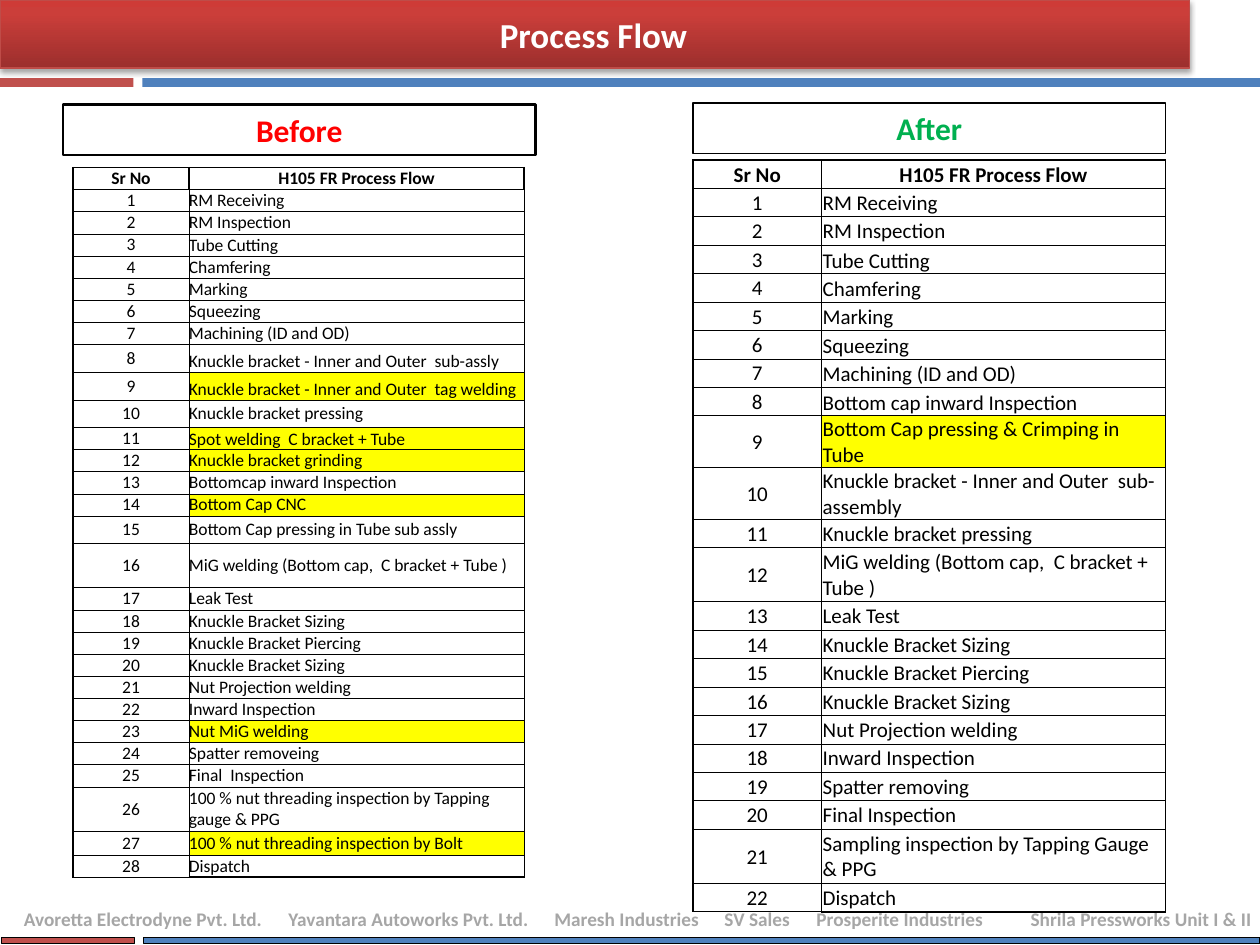
from lxml import etree
from pptx import Presentation
from pptx.dml.color import RGBColor
from pptx.enum.shapes import MSO_SHAPE as Shape
from pptx.enum.text import MSO_ANCHOR as Anchor, PP_ALIGN as Align
from pptx.oxml import parse_xml
from pptx.oxml.ns import nsdecls, qn
from pptx.util import Inches, Pt


def color(value):
    return RGBColor.from_string(value)


def write(frame, text, align, size, shade, bold):
    para = frame.paragraphs[0]
    para.alignment = align
    span = para.add_run()
    span.text = text
    for name, value in {"name": "Calibri", "size": Pt(size), "bold": bold}.items():
        setattr(span.font, name, value)
    span.font.color.rgb = color(shade)


deck = Presentation()
deck.slide_width, deck.slide_height = Inches(10), Inches(7.5)
page = deck.slides.add_slide(deck.slide_layouts[6])

bars = [
    (0, 0, 9.44, 0.54, "CB3E3A", "BF4C48"),
    (0, 0.62, 1.06, 0.07, "C0504D", None),
    (1.13, 0.62, 8.87, 0.07, "4F81BD", None),
    (0.01, 7.44, 1.06, 0.05, "C0504D", "000000"),
    (1.14, 7.44, 8.86, 0.05, "4F81BD", "000000"),
]
for index, (left, top, width, height, fill, outline) in enumerate(bars):
    bar = page.shapes.add_shape(
        Shape.RECTANGLE, Inches(left), Inches(top), Inches(width), Inches(height))
    bar.shadow.inherit = False
    if outline:
        bar.line.color.rgb = color(outline)
        bar.line.width = Pt(0.75)
    else:
        bar.line.fill.background()
    if index:
        bar.fill.solid()
        bar.fill.fore_color.rgb = color(fill)
        continue
    bar.fill.gradient()
    bar.fill.gradient_angle = 90
    stops = bar._element.spPr.find(".//" + qn("a:gsLst"))
    for stop in list(stops):
        stops.remove(stop)
    for position, shade in [(0, "9C2F2D"), (80, fill), (100, "CE3B37")]:
        stop = etree.SubElement(stops, qn("a:gs"), pos=str(position * 1000))
        etree.SubElement(stop, qn("a:srgbClr"), val=shade)
    effects = bar._element.spPr.find(qn("a:effectLst"))
    effects.append(parse_xml(
        f'<a:outerShdw {nsdecls("a")} blurRad="40000" dist="23000" dir="5400000" '
        'rotWithShape="0"><a:srgbClr val="000000"><a:alpha val="35000"/></a:srgbClr>'
        '</a:outerShdw>'))

footer = page.shapes.add_textbox(Inches(0.03), Inches(7.15), Inches(9.97), Inches(0.29))
footer.text_frame.word_wrap = True
footer.text_frame.margin_left = Inches(0.16)
footer.text_frame.margin_right = 0
names = ["Avoretta Electrodyne Pvt. Ltd.", "Yavantara Autoworks Pvt. Ltd.",
         "Maresh Industries", "SV Sales", "Prosperite Industries",
         "Shrila Pressworks Unit I & II"]
tabs = etree.SubElement(footer.text_frame.paragraphs[0]._p.get_or_add_pPr(), qn("a:tabLst"))
for stop in [2.1, 4.21, 5.56, 6.29, 7.99]:
    etree.SubElement(tabs, qn("a:tab"), pos=str(Inches(stop)), algn="l")
write(footer.text_frame, "\t".join(names), Align.LEFT, 11, "A6A6A6", True)

headings = [
    ("Process Flow", 0, 0.06, 9.42, 0.44, 20, "FFFFFF", None),
    ("Before", 0.5, 0.83, 3.75, 0.4, 18, "FF0000", 1.5),
    ("After", 5.5, 0.82, 3.75, 0.4, 18, "00B050", 1),
]
for text, left, top, width, height, size, shade, outline in headings:
    box = page.shapes.add_textbox(Inches(left), Inches(top), Inches(width), Inches(height))
    box.text_frame.word_wrap = True
    write(box.text_frame, text, Align.CENTER, size, shade, True)
    if outline:
        box.line.color.rgb = color("000000")
        box.line.width = Pt(outline)

before_steps = [
    "RM Receiving", "RM Inspection", "Tube Cutting", "Chamfering", "Marking", "Squeezing",
    "Machining (ID and OD)", "Knuckle bracket - Inner and Outer  sub-assly",
    "Knuckle bracket - Inner and Outer  tag welding", "Knuckle bracket pressing",
    "Spot welding  C bracket + Tube", "Knuckle bracket grinding",
    "Bottomcap inward Inspection", "Bottom Cap CNC",
    "Bottom Cap pressing in Tube sub assly",
    "MiG welding (Bottom cap,  C bracket + Tube )", "Leak Test",
    "Knuckle Bracket Sizing", "Knuckle Bracket Piercing", "Knuckle Bracket Sizing",
    "Nut Projection welding", "Inward Inspection", "Nut MiG welding", "Spatter removeing",
    "Final  Inspection", "100 % nut threading inspection by Tapping gauge & PPG",
    "100 % nut threading inspection by Bolt", "Dispatch",
]
after_steps = before_steps[:7] + [
    "Bottom cap inward Inspection", "Bottom Cap pressing & Crimping in Tube",
    "Knuckle bracket - Inner and Outer  sub-assembly", "Knuckle bracket pressing",
    "MiG welding (Bottom cap,  C bracket + Tube )", "Leak Test",
    "Knuckle Bracket Sizing", "Knuckle Bracket Piercing", "Knuckle Bracket Sizing",
    "Nut Projection welding", "Inward Inspection", "Spatter removing",
    "Final Inspection", "Sampling inspection by Tapping Gauge & PPG", "Dispatch",
]
flows = [
    {"steps": after_steps, "left": 5.5, "top": 1.27, "height": 5.95, "columns": (1.02, 2.73),
     "size": 12, "inset": 0.01, "marked": {9}, "low": set(range(3, 11)),
     "tall": {9: 0.4, 10: 0.4, 12: 0.43, 21: 0.43}},
    {"steps": before_steps, "left": 0.58, "top": 1.33, "height": 5.64, "columns": (0.92, 2.66),
     "size": 10, "inset": 0, "marked": {9, 11, 12, 14, 23, 27}, "low": {*range(3, 10), 11},
     "tall": {8: 0.22, 9: 0.22, 10: 0.22, 15: 0.22, 16: 0.35, 26: 0.35, 27: 0.19}},
]
for flow in flows:
    rows = [("Sr No", "H105 FR Process Flow")]
    rows += [(str(number), step) for number, step in enumerate(flow["steps"], 1)]
    tall, inset, last = flow["tall"], Inches(flow["inset"]), len(rows) - 1
    usual = (flow["height"] - sum(tall.values())) / (len(rows) - len(tall))
    table = page.shapes.add_table(
        len(rows), 2, Inches(flow["left"]), Inches(flow["top"]),
        Inches(sum(flow["columns"])), Inches(flow["height"])).table
    table.first_row = table.horz_banding = False
    for column, width in enumerate(flow["columns"]):
        table.columns[column].width = Inches(width)
    for row, texts in enumerate(rows):
        table.rows[row].height = Inches(tall.get(row, usual))
        for column, text in enumerate(texts):
            cell = table.cell(row, column)
            low = column == 1 and row in flow["low"]
            layout = {"margin_left": inset, "margin_right": inset, "margin_top": inset,
                      "margin_bottom": 0,
                      "vertical_anchor": Anchor.BOTTOM if low else Anchor.MIDDLE}
            for name, value in layout.items():
                setattr(cell, name, value)
            centred = row == 0 or column == 0
            write(cell.text_frame, text, Align.CENTER if centred else Align.LEFT,
                  flow["size"], "000000", row == 0)
            heavy = {"L": row == 0 or column == 0, "R": row == 0, "T": row <= 1,
                     "B": row == 0 or (row == last and column == 1)}
            for side, thick in heavy.items():
                cell._tc.get_or_add_tcPr().append(parse_xml(
                    f'<a:ln{side} {nsdecls("a")} w="{Pt(1 if thick else 0.5)}"><a:solidFill>'
                    f'<a:srgbClr val="000000"/></a:solidFill></a:ln{side}>'))
            if column == 1 and row in flow["marked"]:
                cell.fill.solid()
                cell.fill.fore_color.rgb = color("FFFF00")
            else:
                cell.fill.background()

deck.save("out.pptx")
